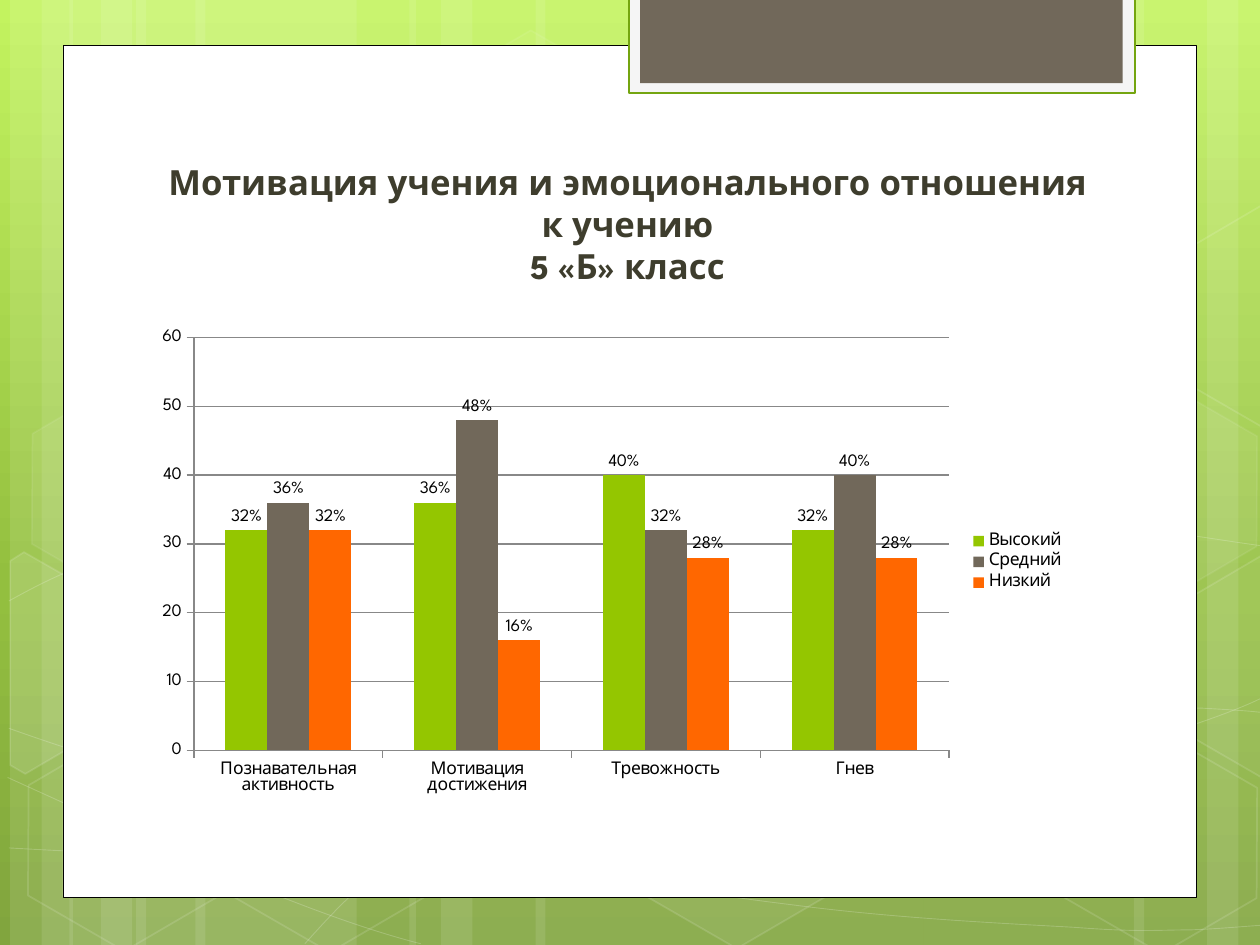
import copy
import math
from dataclasses import dataclass
from typing import NamedTuple, Optional

import lxml.etree
import pptx
import pptx.chart.data
import pptx.dml.color
import pptx.enum.chart
import pptx.enum.shapes
import pptx.enum.text
import pptx.oxml.ns
import pptx.util
from pptx.util import Inches


@dataclass(frozen=True)
class Theme:
    font: str = "League Spartan"
    title_pt: float = 19.8
    chart_pt: float = 10
    white: str = "FFFFFF"
    black: str = "000000"
    title: str = "3E3D2D"
    tab: str = "F5F5F5"
    green_line: str = "74A510"
    grid: str = "888888"
    green: str = "94C600"
    taupe: str = "71685A"
    orange: str = "FF6700"
    backdrop: tuple = ((0, "C3F35F"), (0.62, "93BF3F"), (1, "81A53E"))


class Box(NamedTuple):
    x: float
    y: float
    w: float
    h: float


class Paint(NamedTuple):
    color: str
    alpha: int = 100
    width: float = 1


class Hexagon(NamedTuple):
    x: float
    y: float
    fill: int
    line: int


class CutHexagon(NamedTuple):
    center: tuple
    fill: int
    points: list


T = Theme()
TILT = 30
SHAPE = pptx.enum.shapes.MSO_SHAPE
qn = pptx.oxml.ns.qn
STRIPS = [(1.08, 1.75), (0.08, 0.5), (0.33, 0.83), (1.55, 1.75), (0.55, 0.5), (0.8, 0.83),
          (7.33, 1.75), (9.58, 0.5), (9, 0.83), (4.25, 3.08), (3.25, 0.5), (3.5, 0.83)]
CURVES = [
    [(0.07, 6.73), (0.61, 6.76), (1.15, 6.79), (1.9, 6.78), (2.65, 6.77), (3.58, 6.75), (4.58, 6.65),
     (5.58, 6.55), (7, 6.36), (7.92, 6.17), (8.83, 5.98), (9.77, 5.68), (10.07, 5.51)],
    [(0.07, 4.77), (0.36, 4.61), (0.65, 4.46), (1.21, 4.31), (1.78, 4.16), (2.59, 3.94), (3.47, 3.87),
     (4.36, 3.8), (5.44, 3.79), (6.54, 3.87), (7.64, 3.95), (9.47, 4.26), (10.07, 4.34)],
    [(0.06, 6.17), (1.27, 6.72), (2.47, 7.27), (3.34, 7.49)],
    [(0.07, 5.78), (0.38, 5.89), (0.7, 6), (1.28, 6.16), (1.86, 6.31), (2.73, 6.56), (3.57, 6.73),
     (4.4, 6.9), (5.45, 7.08), (6.28, 7.18), (7.11, 7.29), (8, 7.33), (8.53, 7.36),
     (9.05, 7.4), (9.19, 7.38), (9.45, 7.38), (9.71, 7.37), (9.89, 7.35), (10.07, 7.34)],
    [(2.42, 7.49), (2.6, 7.29), (2.78, 7.09), (3.02, 6.91), (3.26, 6.73), (3.6, 6.53), (3.88, 6.39),
     (4.16, 6.25), (4.33, 6.19), (4.7, 6.09), (5.06, 5.99), (5.73, 5.85), (6.08, 5.78),
     (6.44, 5.71), (6.49, 5.71), (6.8, 5.69), (7.11, 5.66), (7.6, 5.63), (7.94, 5.62),
     (8.29, 5.61), (8.86, 5.62), (8.86, 5.62), (9.08, 5.62), (9.31, 5.62), (9.53, 5.62),
     (9.71, 5.63), (9.88, 5.64), (9.97, 5.65), (10.06, 5.66), (10.03, 5.65), (10.06, 5.66)],
]
HEXAGONS = [Hexagon(3.34, 0.36, 4, 8), Hexagon(4.97, 5.89, 6, 12), Hexagon(0.11, 5.91, 0, 12),
            Hexagon(0.14, 3.12, 7, 8), Hexagon(1.74, 5.92, 0, 12), Hexagon(7.53, 4.53, 10, 12),
            Hexagon(8.34, 5.93, 0, 12), Hexagon(8.34, 3.14, 7, 8)]
CUT_HEXAGONS = [
    CutHexagon((0.36, 5.35), 10, [(0.08, 4.45), (0.19, 4.38), (0.96, 4.82), (0.95, 5.7), (0.2, 6.14), (0.08, 6.07)]),
    CutHexagon((9.85, 5.2), 4, [(9.26, 4.85), (10.01, 4.41), (10.09, 4.46), (10.09, 6.13), (10.02, 6.17), (9.26, 5.73)]),
    CutHexagon((9.85, 2.41), 0, [(9.26, 2.07), (10.01, 1.63), (10.1, 1.68), (10.09, 3.35), (10.02, 3.39), (9.26, 2.95)]),
]
CATEGORIES = ["Познавательная активность", "Мотивация достижения", "Тревожность", "Гнев"]
LEVELS = [("Высокий", T.green, (32, 36, 40, 32)), ("Средний", T.taupe, (36, 48, 32, 40)),
          ("Низкий", T.orange, (32, 16, 28, 28))]


def rgb(color: str):
    return pptx.dml.color.RGBColor.from_string(color)


def paint_fill(fill, paint: Paint) -> None:
    fill.solid()
    fill.fore_color.rgb = rgb(paint.color)
    if paint.alpha < 100:
        clr = fill._xPr.find(".//" + qn("a:srgbClr"))
        lxml.etree.SubElement(clr, qn("a:alpha"), val=str(paint.alpha * 1000))


def style(sp, fill: Optional[Paint], line: Optional[Paint]) -> None:
    sp.shadow.inherit = False
    for target, paint in ((sp.fill, fill), (sp.line.fill, line)):
        if paint and paint.alpha:
            paint_fill(target, paint)
        else:
            target.background()
    if line:
        sp.line.width = pptx.util.Pt(line.width)


def add_box(s, box: Box, fill: Paint, line: Optional[Paint] = None, kind=SHAPE.RECTANGLE):
    sp = s.shapes.add_shape(kind, *map(Inches, box))
    style(sp, fill, line)
    return sp


def add_hexagon(s, h: Hexagon) -> None:
    sp = add_box(s, Box(h.x, h.y, 1.75, 1.52), Paint(T.white, h.fill), Paint(T.white, h.line), SHAPE.HEXAGON)
    sp.adjustments[0] = 0.285
    sp.rotation = TILT


def add_outline(s, points: list, close: bool):
    pts = [(Inches(x), Inches(y)) for x, y in points]
    fb = s.shapes.build_freeform(*pts[0], scale=1.0)
    fb.add_line_segments(pts[1:], close=close)
    return fb.convert_to_shape()


def add_cut_hexagon(s, h: CutHexagon) -> None:
    cx, cy = h.center
    cos, sin = math.cos(math.radians(TILT)), math.sin(math.radians(TILT))
    level = [(cx + (x - cx) * cos + (y - cy) * sin, cy - (x - cx) * sin + (y - cy) * cos) for x, y in h.points]
    sp = add_outline(s, level, True)
    sp.rotation = TILT
    style(sp, Paint(T.white, h.fill), Paint(T.white, 12))


def add_curve(s, points: list) -> None:
    """Draw chained cubic Beziers, three control points to each segment."""
    sp = add_outline(s, points, False)
    lines = sp._element.findall(".//" + qn("a:lnTo"))
    for i in range(0, len(lines), 3):
        bezier = lxml.etree.Element(qn("a:cubicBezTo"))
        lines[i].addprevious(bezier)
        for line in lines[i:i + 3]:
            bezier.append(line[0])
            line.getparent().remove(line)
    style(sp, None, Paint(T.white, 20, 0.5))


def set_backdrop(s) -> None:
    fill = s.background.fill
    fill.gradient()
    fill.gradient_angle = 270
    stops = s._element.find(".//" + qn("a:gsLst"))
    stops.append(copy.deepcopy(stops[-1]))
    for stop, (position, color) in zip(fill.gradient_stops, T.backdrop):
        stop.position = position
        stop.color.rgb = rgb(color)


def set_font(font, size: float, color: str, bold: bool = False) -> None:
    font.name, font.size, font.bold = T.font, pptx.util.Pt(size), bold
    font.color.rgb = rgb(color)


def set_title(s, text: str) -> None:
    sp = s.shapes.title
    s.shapes._spTree.append(sp._element)
    sp.left, sp.top, sp.width, sp.height = map(Inches, Box(1.14, 2.25, 7.68, 0.67))
    tf = sp.text_frame
    tf.text = text
    tf.word_wrap = True
    tf.auto_size = pptx.enum.text.MSO_AUTO_SIZE.NONE
    tf.vertical_anchor = pptx.enum.text.MSO_ANCHOR.BOTTOM
    tf.margin_top, tf.margin_bottom = 0, Inches(0.65)
    p = tf.paragraphs[0]
    p.alignment = pptx.enum.text.PP_ALIGN.CENTER
    p.line_spacing = 1.0
    set_font(p.font, T.title_pt, T.title, True)


def add_level_chart(s, box: Box) -> None:
    xl = pptx.enum.chart
    data = pptx.chart.data.CategoryChartData()
    data.categories = CATEGORIES
    for name, _, values in LEVELS:
        data.add_series(name, values)
    chart = s.shapes.add_chart(xl.XL_CHART_TYPE.COLUMN_CLUSTERED, *map(Inches, box), data).chart
    set_font(chart.font, T.chart_pt, T.black)
    chart.has_title = False
    chart.has_legend = True
    chart.legend.position = xl.XL_LEGEND_POSITION.RIGHT
    chart.legend.include_in_layout = False
    plot = chart.plots[0]
    plot.gap_width, plot.overlap, plot.vary_by_categories = 150, 0, False
    for series, (_, color, _) in zip(plot.series, LEVELS):
        paint_fill(series.format.fill, Paint(color))
        labels = series.data_labels
        labels.show_value = True
        labels.number_format, labels.number_format_is_linked = '0"%"', False
        labels.position = xl.XL_LABEL_POSITION.OUTSIDE_END
        set_font(labels.font, T.chart_pt, T.black)
    axis = chart.value_axis
    axis.minimum_scale, axis.maximum_scale, axis.major_unit = 0, 60, 10
    for line in (axis.format.line, axis.major_gridlines.format.line, chart.category_axis.format.line):
        line.color.rgb = rgb(T.grid)
        line.width = pptx.util.Pt(0.75)


def main() -> None:
    prs = pptx.Presentation()
    prs.slide_width, prs.slide_height = Inches(10), Inches(7.5)
    s = prs.slides.add_slide(prs.slide_layouts.get_by_name("Title Only"))
    set_backdrop(s)
    for x, w in STRIPS:
        add_box(s, Box(x, 0, w, 7.5), Paint(T.white, 10))
    for curve in CURVES:
        add_curve(s, curve)
    for hexagon in HEXAGONS:
        add_hexagon(s, hexagon)
    for cut_hexagon in CUT_HEXAGONS:
        add_cut_hexagon(s, cut_hexagon)
    add_box(s, Box(0.5, 0.36, 9, 6.76), Paint(T.white), Paint(T.black, width=0.5))
    add_box(s, Box(4.99, -0.02, 4.02, 0.76), Paint(T.tab), Paint(T.green_line, width=1.25))
    add_box(s, Box(5.08, -0.02, 3.83, 0.68), Paint(T.taupe))
    set_title(s, "Мотивация учения и эмоционального отношения к учению\v5 «Б» класс")
    add_level_chart(s, Box(1.14, 2.54, 7.41, 3.84))
    prs.save("out.pptx")


if __name__ == "__main__":
    main()
